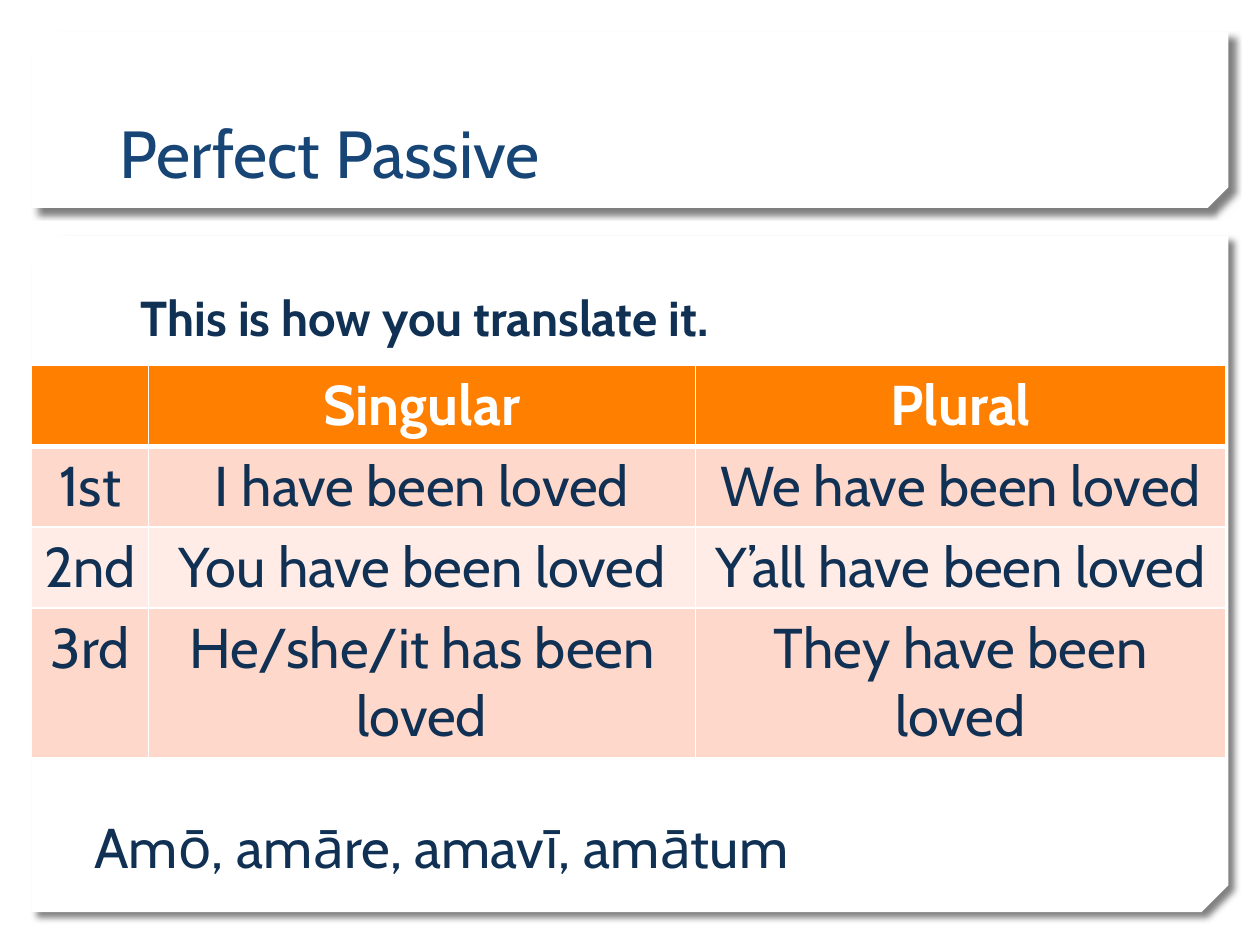
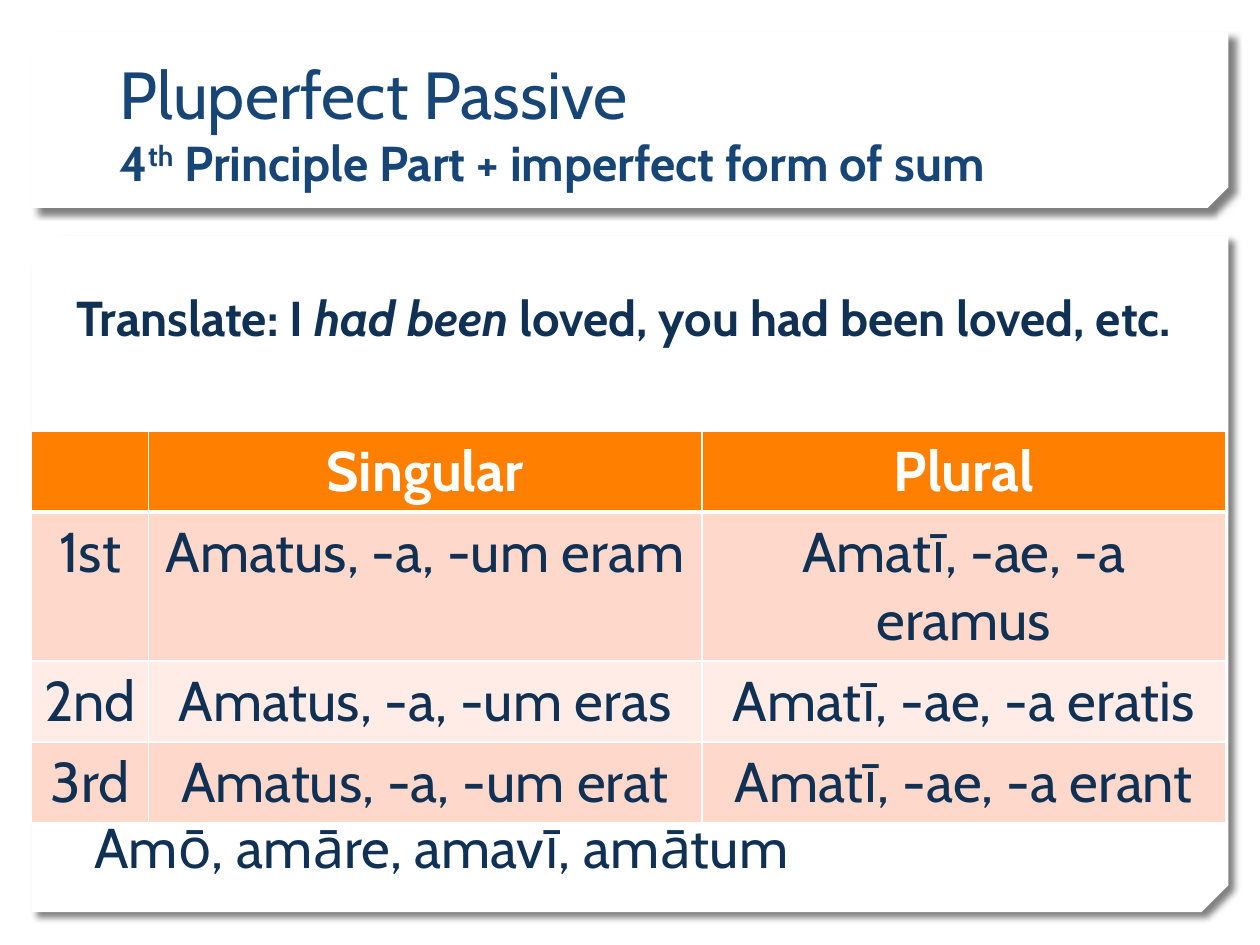
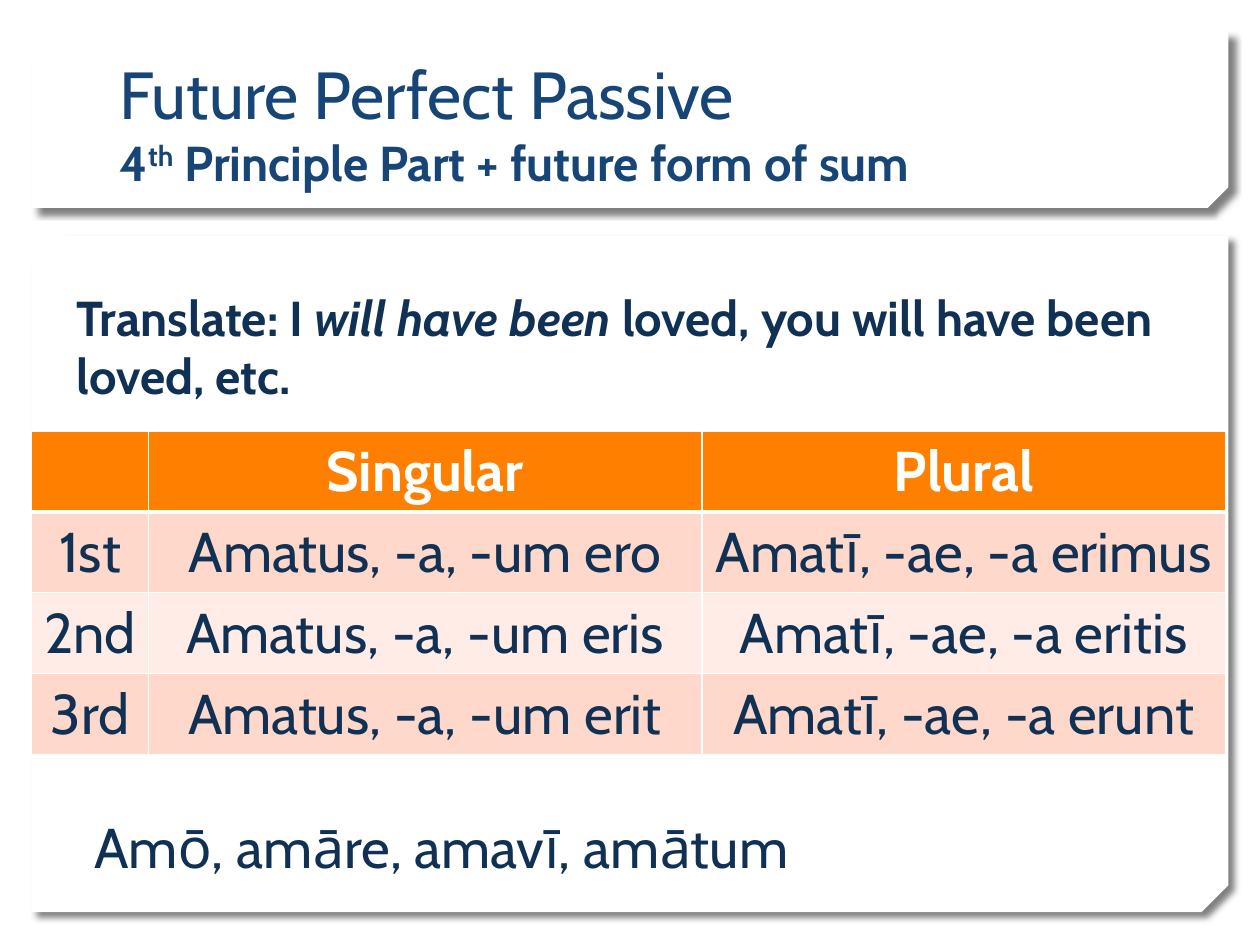
from lxml import etree
from pptx import Presentation
from pptx.dml.color import RGBColor
from pptx.enum.shapes import MSO_SHAPE
from pptx.enum.text import MSO_ANCHOR, MSO_AUTO_SIZE, PP_ALIGN
from pptx.oxml import parse_xml
from pptx.oxml.ns import nsdecls, qn
from pptx.util import Inches, Pt

SNIPPED = MSO_SHAPE.SNIP_2_DIAG_RECTANGLE
BOTTOM = MSO_ANCHOR.BOTTOM
NO_FIT, GROW = MSO_AUTO_SIZE.NONE, MSO_AUTO_SIZE.SHAPE_TO_FIT_TEXT
LEFT, CENTER = PP_ALIGN.LEFT, PP_ALIGN.CENTER

WHITE = RGBColor(0xFF, 0xFF, 0xFF)
TITLE_BLUE = RGBColor(0x17, 0x45, 0x76)
NAVY = RGBColor(0x10, 0x31, 0x54)
ORANGE = RGBColor(0xFF, 0x7F, 0x01)
PINK = RGBColor(0xFF, 0xD8, 0xCC)
PALE_PINK = RGBColor(0xFF, 0xEC, 0xE7)

FONT = "Cabin"
TITLE_SIZE, NOTE_SIZE, TEXT_SIZE = 38, 28, 32
GRID_COLS, GRID_ROWS = 100, 75

PLAIN, ITALIC, SUPER, BREAK = "plain", "italic", "super", "break"
PERSONS = ["1st", "2nd", "3rd"]
PRINCIPAL_PARTS = "Amō, amāre, amavī, amātum"

SHADOW = (
    f'<a:effectLst {nsdecls("a")}><a:outerShdw blurRad="{Pt(4)}" dist="{Pt(5)}" '
    'dir="2700000" algn="tl" rotWithShape="0"><a:srgbClr val="000000">'
    '<a:alpha val="50000"/></a:srgbClr></a:outerShdw></a:effectLst>'
)


class Deck:
    """Holds the shared style and the current slide; lengths are grid units."""

    def __init__(self):
        self.prs = Presentation()
        self.prs.slide_width, self.prs.slide_height = Inches(10), Inches(7.5)
        self.slide = None

    def x(self, cols):
        return round(self.prs.slide_width * cols / GRID_COLS)

    def y(self, rows):
        return round(self.prs.slide_height * rows / GRID_ROWS)

    def box(self, left, top, width, height):
        return self.x(left), self.y(top), self.x(width), self.y(height)

    def new_slide(self):
        self.slide = self.prs.slides.add_slide(self.prs.slide_layouts[5])
        fill = self.slide.background.fill
        fill.solid()
        fill.fore_color.rgb = WHITE
        self.panel(2.5, 14, snip=0.117)
        self.panel(18.7, 53.7, snip=0.04)

    def panel(self, top, height, snip):
        """White card with a snipped lower right corner, behind everything else."""
        sp = self.slide.shapes.add_shape(SNIPPED, *self.box(2.5, top, 95, height))
        sp.adjustments[0], sp.adjustments[1] = 0, snip
        sp.fill.solid()
        sp.fill.fore_color.rgb = WHITE
        sp.line.fill.background()
        props = sp._element.spPr
        props.find(qn("a:xfrm")).set("flipV", "1")
        props.append(parse_xml(SHADOW))
        self.slide.shapes._spTree.insert(2, sp._element)

    def run(self, p, text, size, color, bold=False, kind=PLAIN):
        r = p.add_run()
        r.text = text
        font = r.font
        font.name, font.size, font.bold = FONT, Pt(size), bold
        font.italic = kind == ITALIC
        font.color.rgb = color
        if kind == SUPER:
            font._element.set("baseline", "30000")

    def title(self, text, subtitle):
        sp = self.slide.shapes.title
        sp.left, sp.top, sp.width, sp.height = self.box(8.5, 3.2, 82.9, 12.5)
        tf = sp.text_frame
        tf.word_wrap, tf.auto_size, tf.vertical_anchor = True, NO_FIT, BOTTOM
        p = tf.paragraphs[0]
        p.alignment = LEFT
        self.run(p, text, TITLE_SIZE, TITLE_BLUE)
        if subtitle:
            p.add_line_break()
        for part, kind in subtitle:
            self.run(p, part, NOTE_SIZE, TITLE_BLUE, True, kind)

    def text(self, place, runs, size, bold=False):
        tf = self.slide.shapes.add_textbox(*self.box(*place)).text_frame
        tf.word_wrap, tf.auto_size = True, GROW
        for part, kind in runs:
            self.run(tf.paragraphs[0], part, size, NAVY, bold, kind)

    def border(self, cell, widths):
        """Draw white left, right, top and bottom lines, widths in points."""
        tcPr = cell._tc.get_or_add_tcPr()
        for i, (side, width) in enumerate(zip("LRTB", widths)):
            ln = etree.Element(qn(f"a:ln{side}"), w=str(Pt(width)))
            fill = etree.SubElement(ln, qn("a:solidFill"))
            etree.SubElement(fill, qn("a:srgbClr"), val=str(WHITE))
            tcPr.insert(i, ln)

    def table(self, top, height, singular_width, forms):
        width, person_width = 94.8, 9.3
        rows = [("", "Singular", "Plural")]
        rows += [(person, *pair) for person, pair in zip(PERSONS, forms)]
        frame = self.slide.shapes.add_table(
            len(rows), 3, *self.box(2.5, top, width, height))
        table = frame.table
        widths = (person_width, singular_width, width - person_width - singular_width)
        for col, cols in zip(table.columns, widths):
            col.width = self.x(cols)
        for i, row in enumerate(rows):
            table.rows[i].height = self.y(4.1)
            head = i == 0
            for j, text in enumerate(row):
                cell = table.cell(i, j)
                cell.fill.solid()
                cell.fill.fore_color.rgb = ORANGE if head else PINK if i % 2 else PALE_PINK
                self.border(cell, (1, 1, 3 if i == 1 else 1, 3 if head else 1))
                p = cell.text_frame.paragraphs[0]
                p.alignment = CENTER
                if text:
                    self.run(p, text, TEXT_SIZE, WHITE if head else NAVY, head)
        frame.height = self.y(height)

    def tense(self, title, subtitle, note, note_place, table_place, forms):
        self.new_slide()
        self.title(title, subtitle)
        self.table(*table_place, forms)
        self.text(note_place, note, NOTE_SIZE, bold=True)
        self.text((6.5, 64, 80.9, 6.4), [(PRINCIPAL_PARTS, PLAIN)], TEXT_SIZE)


def fourth_part_plus(form):
    return [("4", PLAIN), ("th", SUPER),
            (f" Principle Part + {form} form of sum", PLAIN)]


def translate(verb):
    return [("Translate: I ", PLAIN), (verb, ITALIC),
            (f" loved, you {verb} loved, etc.", PLAIN)]


def participle_forms(singular, plural):
    return [(f"Amatus, -a, -um {s}", f"Amatī, -ae, -a {p}")
            for s, p in zip(singular, plural)]


def main():
    deck = Deck()
    deck.tense(
        "Perfect Passive", [], [("This is how you translate it.", PLAIN)],
        (10.2, 22.3, 81.3, 5.7), (29, 30.7, 43.4),
        [("I have been loved", "We have been loved"),
         ("You have been loved", "Y’all have been loved"),
         ("He/she/it has been loved", "They have been loved")])
    lower_table = (34.2, 25.3, 43.9)
    deck.tense(
        "Pluperfect Passive", fourth_part_plus("imperfect"), translate("had been"),
        (5.1, 22.3, 89.5, 5.7), lower_table,
        participle_forms(["eram", "eras", "erat"], ["eramus", "eratis", "erant"]))
    deck.tense(
        "Future Perfect Passive", fourth_part_plus("future"), translate("will have been"),
        (5.1, 22.3, 89.5, 10.4), lower_table,
        participle_forms(["ero", "eris", "erit"], ["erimus", "eritis", "erunt"]))
    deck.prs.save("out.pptx")


if __name__ == "__main__":
    main()
